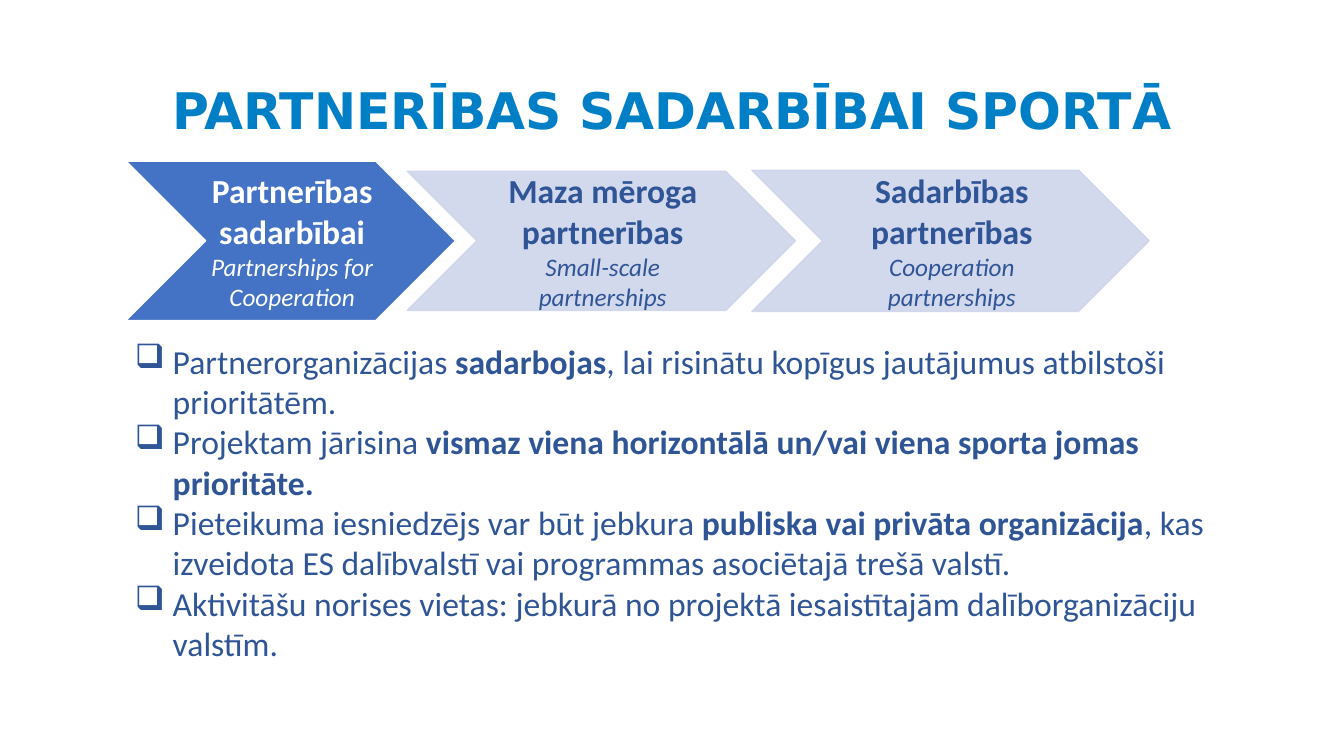
from lxml import etree
from pptx import Presentation
from pptx.dml.color import RGBColor
from pptx.enum.shapes import MSO_SHAPE
from pptx.enum.text import MSO_ANCHOR, PP_ALIGN
from pptx.oxml.ns import qn
from pptx.util import Pt

CHEVRON = MSO_SHAPE.CHEVRON
MIDDLE, TOP = MSO_ANCHOR.MIDDLE, MSO_ANCHOR.TOP
CENTER, LEFT = PP_ALIGN.CENTER, PP_ALIGN.LEFT

WHITE = RGBColor(0xFF, 0xFF, 0xFF)
SKY = RGBColor(0x00, 0x7F, 0xC7)
BLUE = RGBColor(0x44, 0x72, 0xC4)
PALE = RGBColor(0xCF, 0xD5, 0xEA)
NAVY = RGBColor(0x2F, 0x55, 0x97)

HEAD = {"name": "DejaVu Sans", "size": Pt(36), "bold": True}
PLAIN = {"name": "Calibri", "size": Pt(24), "bold": False}
BOLD = {**PLAIN, "bold": True}
SMALL = {**PLAIN, "size": Pt(18), "italic": True}

MID = 172
STEPS = [
    (90, 235.4, 113.8, BLUE, WHITE, WHITE, 100,
     "Partnerības sadarbībai", "Partnerships for Cooperation"),
    (290.9, 277.2, 99.4, PALE, PALE, NAVY, 90,
     "Maza mēroga partnerības", "Small-scale partnerships"),
    (537.1, 283.7, 100.8, PALE, PALE, NAVY, 90,
     "Sadarbības partnerības", "Cooperation partnerships"),
]
POINTS = [
    [("Partnerorganizācijas ", PLAIN), ("sadarbojas", BOLD),
     (", lai risinātu kopīgus jautājumus atbilstoši prioritātēm.", PLAIN)],
    [("Projektam jārisina ", PLAIN),
     ("vismaz viena horizontālā un/vai viena sporta jomas prioritāte.", BOLD)],
    [("Pieteikuma iesniedzējs var būt jebkura ", PLAIN),
     ("publiska vai privāta organizācija", BOLD),
     (", kas izveidota ES dalībvalstī vai programmas asociētajā trešā valstī.", PLAIN)],
    [("Aktivitāšu norises vietas: jebkurā no projektā iesaistītajām "
      "dalīborganizāciju valstīm.", PLAIN)],
]


def apply(item, style):
    for key, value in style.items():
        setattr(item, key, value)


def add_text(slide, box, paras, color, align, anchor, pads=(7.2, 3.6, 7.2, 3.6)):
    frame = slide.shapes.add_textbox(*map(Pt, box)).text_frame
    sides = ("margin_left", "margin_top", "margin_right", "margin_bottom")
    apply(frame, {"word_wrap": True, "vertical_anchor": anchor,
                  **dict(zip(sides, map(Pt, pads)))})
    for i, runs in enumerate(paras):
        para = frame.add_paragraph() if i else frame.paragraphs[0]
        para.alignment = align
        for text, style in runs:
            run = para.add_run()
            run.text = text
            apply(run.font, style)
            run.font.color.rgb = color
    return frame


def add_title(slide, box):
    runs = [("PARTNERĪBAS SADARBĪBAI SPORTĀ", HEAD)]
    frame = add_text(slide, box, [runs], SKY, CENTER, MIDDLE)
    frame.paragraphs[0].line_spacing = 0.9


def fade(fill, share):
    color = fill._xPr.find(qn("a:solidFill"))[0]
    etree.SubElement(color, qn("a:alpha")).set("val", str(share * 1000))


def add_step(slide, box, fill, edge, ink, share, name, note):
    left, top, width, height = box
    shape = slide.shapes.add_shape(CHEVRON, *map(Pt, box))
    shape.shadow.inherit = False
    shape.line.width = Pt(1)
    for paint, color in ((shape.fill, fill), (shape.line.fill, edge)):
        paint.solid()
        paint.fore_color.rgb = color
        if share < 100:
            fade(paint, share)
    inner = (left + height / 2, top, width - height, height)
    add_text(slide, inner, [[(name, BOLD)], [(note, SMALL)]], ink,
             CENTER, MIDDLE, (2, 1.3, 0, 1.3))


def add_points(slide, box):
    frame = add_text(slide, box, POINTS, NAVY, LEFT, TOP)
    for para in frame.paragraphs:
        props = para._p.get_or_add_pPr()
        props.set("marL", str(Pt(27)))
        props.set("indent", str(-Pt(27)))
        etree.SubElement(props, qn("a:buChar")).set("char", "❑")


def main():
    deck = Presentation()
    deck.slide_width, deck.slide_height = Pt(960), Pt(540)
    slide = deck.slides.add_slide(deck.slide_layouts[6])
    add_title(slide, (66, 29, 828, 104))
    for left, width, height, *rest in STEPS:
        add_step(slide, (left, MID - height / 2, width, height), *rest)
    add_points(slide, (89.3, 239.8, 781.2, 270))
    deck.save("out.pptx")


if __name__ == "__main__":
    main()
